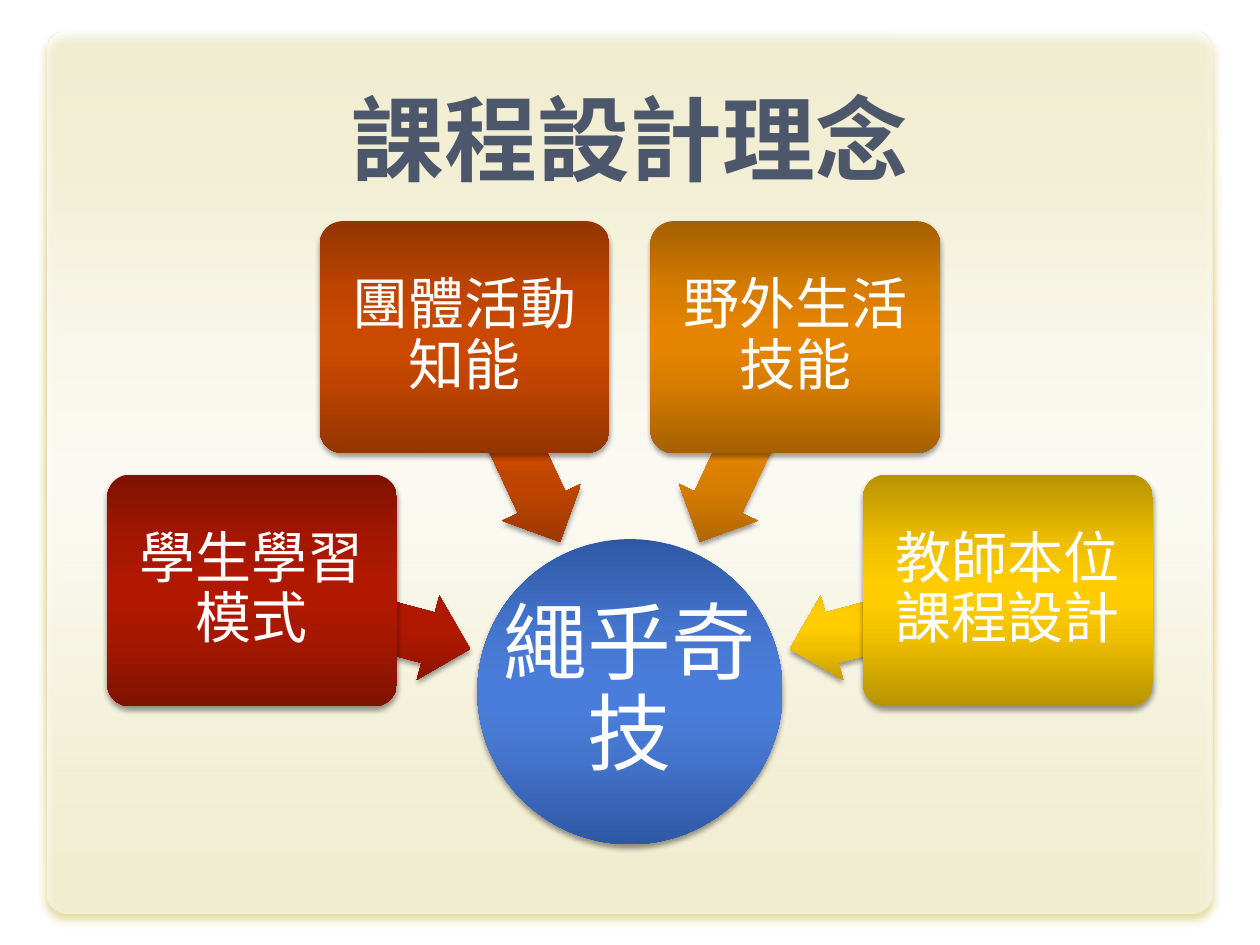
"""Build the course design concept slide: four ideas converging on one hub."""
import math

from lxml import etree
from pptx import Presentation
from pptx import util as u
from pptx.dml.color import RGBColor
from pptx.enum import shapes, text
from pptx.oxml import parse_xml
from pptx.oxml.ns import nsdecls, qn

TITLE = "課程設計理念"
HUB = "繩乎奇技"
IDEAS = [
    ("學生學習模式", 195, ("7F1200", "A61700", "B01900")),
    ("團體活動知能", 245, ("923500", "BE4400", "CA4900")),
    ("野外生活技能", 295, ("A56000", "D67C00", "E48400")),
    ("教師本位課程設計", 345, ("B89300", "EFBF00", "FECC00")),
]
THEME = {
    "font": "Noto Sans CJK SC",
    "title": (53, "4C576B"),
    "hub": (48, "FFFFFF"),
    "idea": (32, "FFFFFF"),
    "hub_tones": ("2E58A6", "4675CD", "4A7DDB"),
    "panel_stops": [(0, "FFFFFF", 50), (35, "FFFFFF", 87), (50, "FFFFFF", 92),
                    (60, "FFFFFF", 89), (100, "FFFFFF", 55)],
    "panel_shadow": ("C3B131", 90, 5, 3.6),
    "shadow": ("000000", 40, 3.1, 2),
}
SLIDE_W, SLIDE_H = 720, 540
PANEL = (27, 18, 666, 504)
TITLE_BOX = (36, 24, 648, 90)
HUB_X, HUB_Y, HUB_SIZE = 360, 395.3, 174.4
IDEA_SIZE, IDEA_RADIUS = (165.6, 132.5), 223.6
ARROW_SIZE, ARROW_RADIUS = (129.6, 49.7), 159.4


def centred(x, y, width, height):
    return x - width / 2, y - height / 2, width, height


def on_orbit(angle, radius, size):
    turn = math.radians(angle)
    return centred(HUB_X + radius * math.cos(turn), HUB_Y + radius * math.sin(turn), *size)


def glossy(tones):
    dark, mid, light = tones
    return [(0, dark, 100), (30, mid, 100), (46, light, 100),
            (56, light, 100), (70, mid, 100), (100, dark, 100)]


def colour_xml(colour, opacity):
    return f'<a:srgbClr val="{colour}"><a:alpha val="{opacity * 1000}"/></a:srgbClr>'


def add_part(slide, preset, box, stops, shadow, adjustments=()):
    part = slide.shapes.add_shape(preset, *map(u.Pt, box))
    for index, value in enumerate(adjustments):
        part.adjustments[index] = value
    part.line.fill.background()
    part.shadow.inherit = False
    properties = part._element.spPr
    gradient = "".join(f'<a:gs pos="{place * 1000}">{colour_xml(colour, opacity)}</a:gs>'
                       for place, colour, opacity in stops)
    properties.find(qn("a:prstGeom")).addnext(parse_xml(
        f'<a:gradFill {nsdecls("a")} rotWithShape="0"><a:gsLst>{gradient}</a:gsLst>'
        '<a:lin ang="5400000" scaled="0"/></a:gradFill>'))
    colour, opacity, blur, distance = shadow
    properties.find(qn("a:effectLst")).append(parse_xml(
        f'<a:outerShdw {nsdecls("a")} blurRad="{u.Pt(blur)}" dist="{u.Pt(distance)}" '
        f'dir="5400000" rotWithShape="0">{colour_xml(colour, opacity)}</a:outerShdw>'))
    return part


def write(holder, wording, style, inset, spacing, anchor=text.MSO_ANCHOR.MIDDLE, bold=False):
    size, colour = THEME[style]
    frame = holder.text_frame
    frame.word_wrap = True
    frame.vertical_anchor = anchor
    frame.margin_left = frame.margin_right = u.Pt(inset)
    frame.margin_top = frame.margin_bottom = u.Pt(inset)
    paragraph = frame.paragraphs[0]
    paragraph.alignment = text.PP_ALIGN.CENTER
    paragraph.line_spacing = spacing
    run = paragraph.add_run()
    run.text = wording
    run.font.size = u.Pt(size)
    run.font.bold = bold
    run.font.color.rgb = RGBColor.from_string(colour)
    run.font.name = THEME["font"]
    latin = run.font._element.find(qn("a:latin"))
    east_asian = etree.Element(qn("a:ea"), typeface=THEME["font"])
    latin.addnext(east_asian)


def main():
    deck = Presentation()
    deck.slide_width, deck.slide_height = u.Pt(SLIDE_W), u.Pt(SLIDE_H)
    slide = deck.slides.add_slide(deck.slide_layouts[5])
    preset = shapes.MSO_SHAPE

    panel = add_part(slide, preset.ROUNDED_RECTANGLE, PANEL,
                     THEME["panel_stops"], THEME["panel_shadow"], [0.022])
    title = slide.shapes.title
    title._element.addprevious(panel._element)
    title.left, title.top, title.width, title.height = map(u.Pt, TITLE_BOX)
    write(title, TITLE, "title", 3.6, 1, text.MSO_ANCHOR.BOTTOM, True)

    hub_box = centred(HUB_X, HUB_Y, HUB_SIZE, HUB_SIZE)
    add_part(slide, preset.OVAL, hub_box, glossy(THEME["hub_tones"]), THEME["shadow"])
    hub_label = slide.shapes.add_textbox(*map(u.Pt, hub_box))
    write(hub_label, HUB, "hub", 2.2, 0.9)

    for wording, angle, tones in IDEAS:
        stops = glossy(tones)
        arrow = add_part(slide, preset.LEFT_ARROW, on_orbit(angle, ARROW_RADIUS, ARROW_SIZE),
                         stops, THEME["shadow"], [0.6, 0.5])
        arrow.rotation = angle
        idea = add_part(slide, preset.ROUNDED_RECTANGLE, on_orbit(angle, IDEA_RADIUS, IDEA_SIZE),
                        stops, THEME["shadow"], [0.1])
        write(idea, wording, "idea", 5, 0.9)

    deck.save("out.pptx")


if __name__ == "__main__":
    main()
